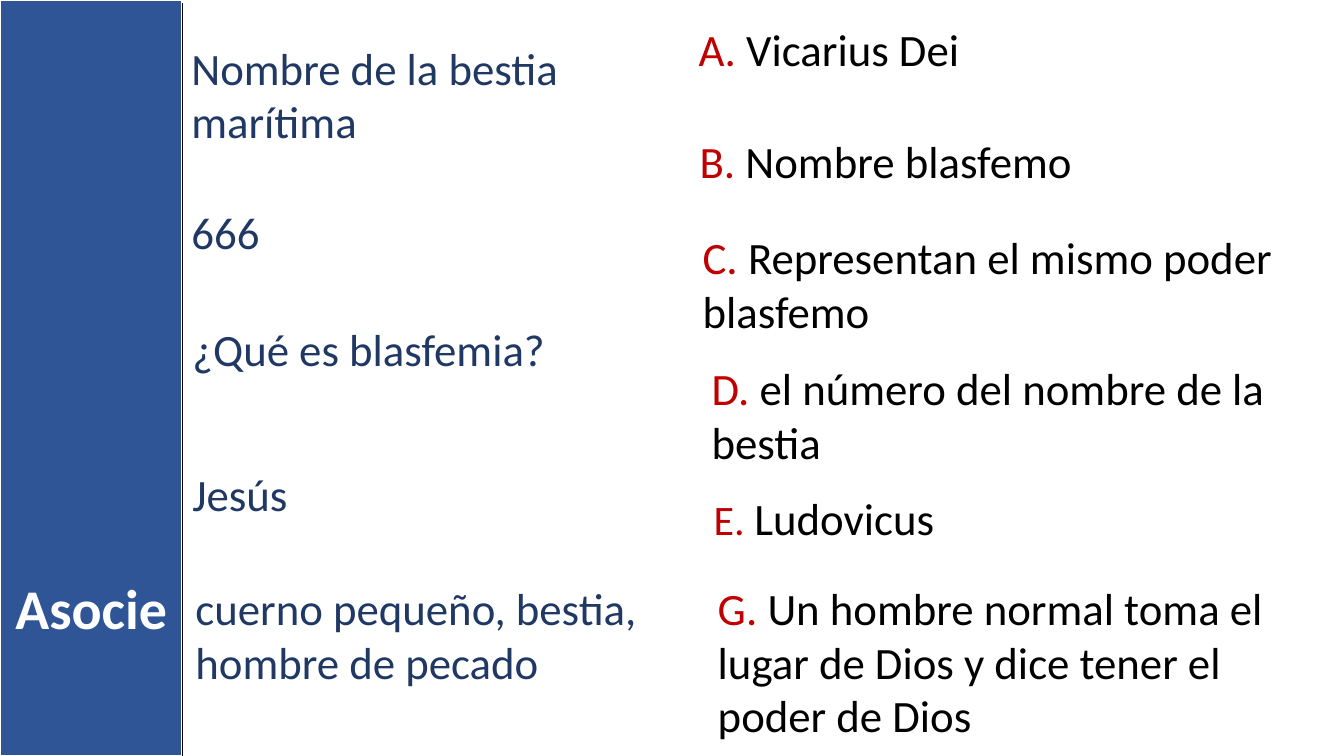
from lxml.etree import SubElement
from pptx import Presentation
from pptx.dml.color import RGBColor
from pptx.enum.shapes import MSO_CONNECTOR as Connector, MSO_SHAPE as Shape
from pptx.enum.text import MSO_ANCHOR as Anchor, MSO_AUTO_SIZE as AutoSize, PP_ALIGN as Align
from pptx.oxml.ns import qn
from pptx.util import Inches, Pt

WIDTH, HEIGHT = 13.33, 7.5
BAND = 1.81
LINE_HEIGHT, PADDING = 0.54, 0.1
FONT, SIZE = "Calibri", 32
COLORS = {
    "band": "2F5597",
    "prompt": "203864",
    "letter": "C00000",
    "answer": "000000",
    "white": "FFFFFF",
}

PROMPTS = [
    (1.8, 0.35, 4.62, 2, "Nombre de la bestia marítima"),
    (1.8, 1.98, 2.57, 1, "666"),
    (1.81, 3.14, 4.85, 1, "¿Qué es blasfemia?"),
    (1.81, 4.58, 4.61, 1, "Jesús"),
    (1.84, 5.71, 4.77, 2, "cuerno pequeño, bestia, hombre de pecado"),
]
ANSWERS = [
    (6.83, 0.17, 6.3, 1, "A", SIZE, "Vicarius Dei"),
    (6.84, 1.28, 4.52, 1, "B", SIZE, "Nombre blasfemo"),
    (6.87, 2.23, 5.98, 2, "C", SIZE, "Representan el mismo poder blasfemo"),
    (6.96, 3.53, 6.04, 2, "D", SIZE, "el número del nombre de la bestia"),
    (6.98, 4.82, 5.75, 1, "E", 30, "Ludovicus"),
    (7.02, 5.71, 5.82, 3, "G", SIZE,
     "Un hombre normal toma el lugar de Dios y dice tener el poder de Dios"),
]


def color(name):
    """Return the named colour."""
    return RGBColor.from_string(COLORS[name])


def add_run(paragraph, text, color_name, size=SIZE, bold=False):
    """Append one formatted run to a paragraph."""
    run = paragraph.add_run()
    run.text = text
    run.font.name = FONT
    run.font.size = Pt(size)
    run.font.bold = bold
    run.font.color.rgb = color(color_name)


def add_entry(slide, left, top, width, lines):
    """Add a wrapping text box tall enough for its lines and return its paragraph."""
    height = lines * LINE_HEIGHT + PADDING
    entry = slide.shapes.add_textbox(*map(Inches, (left, top, width, height)))
    entry.text_frame.word_wrap = True
    entry.text_frame.auto_size = AutoSize.SHAPE_TO_FIT_TEXT
    return entry.text_frame.paragraphs[0]


def add_band(slide):
    """Draw the coloured band behind the title."""
    band = slide.shapes.add_shape(Shape.RECTANGLE, 0, 0, Inches(BAND), Inches(HEIGHT))
    band.shadow.inherit = False
    band.fill.solid()
    band.fill.fore_color.rgb = color("band")
    band.line.color.rgb = color("white")
    band.line.width = Pt(1.5)
    slide.shapes.title._element.addprevious(band._element)


def set_title(slide, text):
    """Place the title across the band."""
    title = slide.shapes.title
    title.left, title.top, title.width, title.height = map(Inches, (0, 5.64, BAND, 0.77))
    frame = title.text_frame
    frame.word_wrap = True
    frame.auto_size = AutoSize.SHAPE_TO_FIT_TEXT
    frame.vertical_anchor = Anchor.TOP
    heading = frame.paragraphs[0]
    heading.alignment = Align.CENTER
    add_run(heading, text, "white", 40, True)


def add_edge(slide):
    """Draw the dark line along the right edge of the band."""
    ends = map(Inches, (BAND, 0.03, BAND, HEIGHT))
    edge = slide.shapes.add_connector(Connector.STRAIGHT, *ends)
    edge.line.color.rgb = color("answer")
    edge.line.width = Pt(1)
    SubElement(edge._element.spPr, qn("a:effectLst"))


def main():
    """Build and save the matching exercise."""
    deck = Presentation()
    deck.slide_width, deck.slide_height = Inches(WIDTH), Inches(HEIGHT)
    slide = deck.slides.add_slide(deck.slide_layouts.get_by_name("Title Only"))
    add_band(slide)
    set_title(slide, "Asocie")
    for *place, prompt in PROMPTS:
        add_run(add_entry(slide, *place), prompt, "prompt")
    for *place, letter, letter_size, answer in ANSWERS:
        paragraph = add_entry(slide, *place)
        add_run(paragraph, f"{letter}. ", "letter", letter_size)
        add_run(paragraph, answer, "answer")
    add_edge(slide)
    deck.save("out.pptx")


main()
